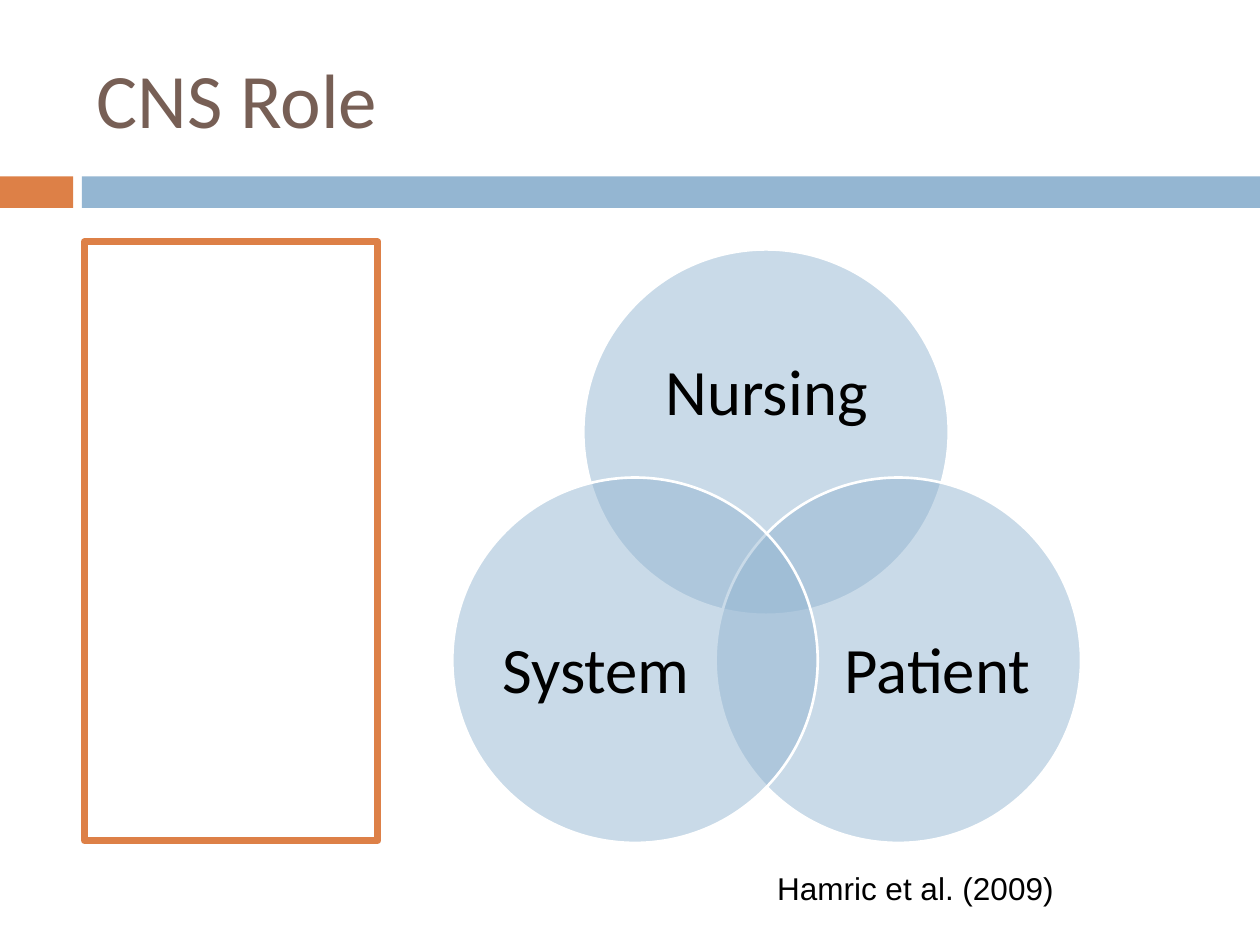
from dataclasses import dataclass
from lxml.etree import SubElement
from pptx import Presentation
from pptx.dml.color import RGBColor as RGB
from pptx.enum.shapes import MSO_SHAPE as Shape
from pptx.enum.text import MSO_ANCHOR as Anchor, PP_ALIGN as Align
from pptx.oxml.ns import qn
from pptx.util import Inches, Pt


@dataclass(frozen=True)
class Theme:
    blue: RGB = RGB(0x94, 0xB6, 0xD2)
    orange: RGB = RGB(0xDD, 0x80, 0x47)
    brown: RGB = RGB(0x77, 0x5F, 0x55)
    white: RGB = RGB(0xFF, 0xFF, 0xFF)
    black: RGB = RGB(0, 0, 0)
    head: str = "Calibri"
    body: str = "Arial"
    title: int = 44
    label: int = 37
    cite: int = 18


THEME = Theme()


def add_form(slide, kind, box, fill=None, line=None, width=0, alpha=None):
    form = slide.shapes.add_shape(kind, *map(Inches, box))
    form.shadow.inherit = False
    if fill is None:
        form.fill.background()
    else:
        form.fill.solid()
        form.fill.fore_color.rgb = fill
    if alpha is not None:
        # Transparency, in percent of full opacity
        tint = form.fill._xPr.find(qn("a:solidFill"))[0]
        SubElement(tint, qn("a:alpha")).set("val", str(alpha * 1000))
    if line is None:
        form.line.fill.background()
    else:
        form.line.color.rgb = line
        form.line.width = Pt(width)


def add_text(slide, text, box, size, color, font, anchor=Anchor.TOP):
    frame = slide.shapes.add_textbox(*map(Inches, box)).text_frame
    frame.word_wrap = True
    frame.vertical_anchor = anchor
    frame.text = text
    type_ = frame.paragraphs[0].runs[0].font
    type_.size, type_.name = Pt(size), font
    type_.color.rgb = color
    return frame


def add_ring(slide, name, spot, area):
    size = 2.9
    add_form(slide, Shape.OVAL, (*spot, size, size),
             THEME.blue, THEME.white, 1.5, alpha=50)
    frame = add_text(slide, name, area, THEME.label, THEME.black,
                     THEME.head, Anchor.MIDDLE)
    frame.margin_left = frame.margin_right = 0
    frame.margin_top = frame.margin_bottom = 0
    line = frame.paragraphs[0]
    line.alignment = Align.CENTER
    line.line_spacing = 0.9


def main():
    deck = Presentation()
    deck.slide_width, deck.slide_height = Inches(10), Inches(7.5)
    slide = deck.slides.add_slide(deck.slide_layouts[6])

    # Title and the band under it
    add_form(slide, Shape.RECTANGLE, (0, 1.4, 0.58, 0.25), THEME.orange)
    add_form(slide, Shape.RECTANGLE, (0.65, 1.4, 9.35, 0.25), THEME.blue)
    add_text(slide, "CNS Role", (0.67, 0.3, 8.83, 0.95), THEME.title,
             THEME.brown, THEME.head, Anchor.MIDDLE)

    # Empty side panel
    add_form(slide, Shape.RECTANGLE, (0.67, 1.92, 2.33, 4.75),
             line=THEME.orange, width=4)

    # Three overlapping roles, back to front
    rings = [
        ("Nursing", (4.63, 1.98), (5.02, 2.48, 2.13, 1.3)),
        ("Patient", (5.68, 3.79), (6.57, 4.54, 1.74, 1.59)),
        ("System", (3.59, 3.79), (3.86, 4.54, 1.74, 1.59)),
    ]
    for name, spot, area in rings:
        add_ring(slide, name, spot, area)

    # Citation
    add_text(slide, " Hamric et al. (2009)", (6, 6.85, 4, 0.71),
             THEME.cite, THEME.black, THEME.body)

    deck.save("out.pptx")


if __name__ == "__main__":
    main()
